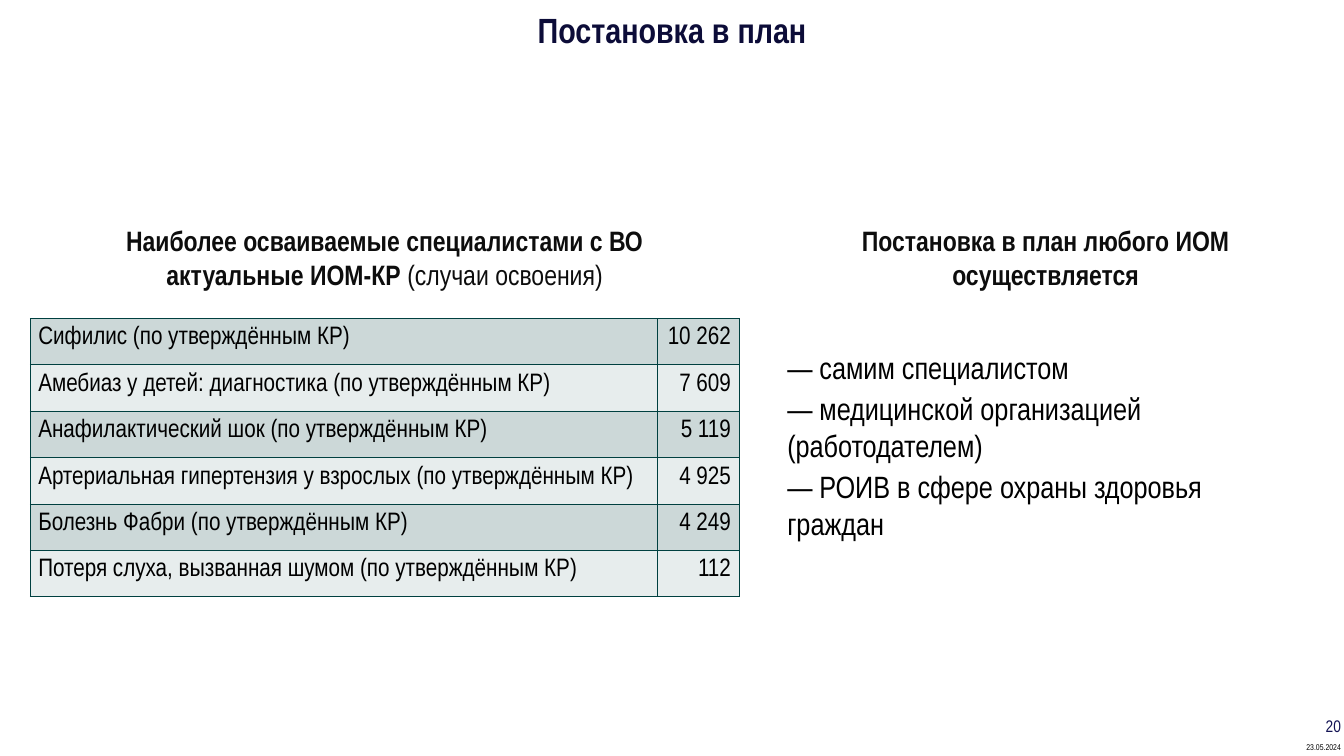
from pptx import Presentation
from pptx import util as u
from pptx.dml import color
from pptx.enum import text
from pptx.oxml import parse_xml
from pptx.oxml import ns

LEFT, CENTER, RIGHT = text.PP_ALIGN.LEFT, text.PP_ALIGN.CENTER, text.PP_ALIGN.RIGHT
TOP, MIDDLE = text.MSO_ANCHOR.TOP, text.MSO_ANCHOR.MIDDLE
EVEN = (0.08, 0.08, 0.08, 0.08)
NARROW = (0.04, 0.04, 0.04, 0.04)
LINE_BREAK = "\n"


def rgb(value):
    return color.RGBColor.from_string(value)


def apply(target, values):
    for name, value in values.items():
        setattr(target, name, value)


class SlideBuilder:
    """Holds the style and the current slide and adds elements to it."""

    font = "Arial Narrow"
    border = "004040"
    bands = ("CCD8D8", "E7EDED")

    def __init__(self, slide):
        self.slide = slide

    def fill_paragraph(self, paragraph, runs, size, ink, align=LEFT, after=0):
        apply(paragraph, {"alignment": align, "space_after": u.Pt(after)})
        for words, bold in runs:
            if words == LINE_BREAK:
                paragraph.add_line_break()
                continue
            run = paragraph.add_run()
            run.text = words
            apply(run.font, {"name": self.font, "size": u.Pt(size), "bold": bold})
            run.font.color.rgb = rgb(ink)

    def margins(self, target, insets):
        sides = ("margin_left", "margin_top", "margin_right", "margin_bottom")
        apply(target, {side: u.Inches(inset) for side, inset in zip(sides, insets)})

    def text_box(self, place, paragraphs, size, ink, align=LEFT, anchor=MIDDLE,
                 insets=EVEN, wrap=True, after=0):
        shape = self.slide.shapes.add_textbox(*map(u.Inches, place))
        frame = shape.text_frame
        apply(frame, {"word_wrap": wrap, "vertical_anchor": anchor,
                      "auto_size": text.MSO_AUTO_SIZE.SHAPE_TO_FIT_TEXT})
        self.margins(frame, insets)
        for index, runs in enumerate(paragraphs):
            paragraph = frame.add_paragraph() if index else frame.paragraphs[0]
            self.fill_paragraph(paragraph, runs, size, ink, align, after)

    def outline(self, cell):
        properties = cell._tc.get_or_add_tcPr()
        for side in ("lnL", "lnR", "lnT", "lnB"):
            properties.append(parse_xml(
                f'<a:{side} {ns.nsdecls("a")} w="{u.Pt(0.75)}"><a:solidFill>'
                f'<a:srgbClr val="{self.border}"/></a:solidFill></a:{side}>'))

    def table(self, left, top, widths, row_height, rows, size, ink):
        place = (left, top, sum(widths), row_height * len(rows))
        table = self.slide.shapes.add_table(
            len(rows), len(widths), *map(u.Inches, place)).table
        apply(table, {"first_row": False, "horz_banding": False})
        for column, width in zip(table.columns, widths):
            column.width = u.Inches(width)
        for row_index, row in enumerate(rows):
            table.rows[row_index].height = u.Inches(row_height)
            for column_index, words in enumerate(row):
                cell = table.cell(row_index, column_index)
                self.margins(cell, EVEN)
                self.outline(cell)
                cell.fill.solid()
                cell.fill.fore_color.rgb = rgb(self.bands[row_index % 2])
                align = RIGHT if column_index else LEFT
                self.fill_paragraph(cell.text_frame.paragraphs[0], [(words, False)],
                                    size, ink, align)


def main():
    presentation = Presentation()
    apply(presentation, {"slide_width": u.Inches(13.33), "slide_height": u.Inches(7.5)})
    builder = SlideBuilder(presentation.slides.add_slide(presentation.slide_layouts[6]))

    builder.text_box((12.91, 7.32, 0.43, 0.18), [[("23.05.2024", False)]], 6, "000000",
                     RIGHT, TOP, NARROW, wrap=False)
    builder.text_box((0.17, 0, 12.99, 0.58), [[("Постановка в план", True)]], 25, "0C0C38",
                     CENTER)
    builder.text_box((12.91, 7.06, 0.43, 0.24), [[("20", False)]], 12, "131354",
                     RIGHT, insets=(0.04, 0.04, 0.04, 0))

    table_heading = [("Наиболее осваиваемые специалистами с ВО", True), (LINE_BREAK, True),
                     ("актуальные ИОМ-КР ", True), ("(случаи освоения)", False)]
    list_heading = [("Постановка в план любого ИОМ осуществляется", True)]
    for left, width, heading in ((0.3, 7.03, table_heading), (7.71, 5.32, list_heading)):
        builder.text_box((left, 2.14, width, 0.83), [heading], 20, "0D0D0D", CENTER)

    modules = [
        ("Сифилис (по утверждённым КР)", "10 262"),
        ("Амебиаз у детей: диагностика (по утверждённым КР)", "7 609"),
        ("Анафилактический шок (по утверждённым КР)", "5 119"),
        ("Артериальная гипертензия у взрослых (по утверждённым КР)", "4 925"),
        ("Болезнь Фабри (по утверждённым КР)", "4 249"),
        ("Потеря слуха, вызванная шумом (по утверждённым КР)", "112"),
    ]
    builder.table(0.3, 3.16, (6.22, 0.81), 0.41, modules, 18, "000000")

    planners = ("— самим специалистом", "— медицинской организацией (работодателем)",
                "— РОИВ в сфере охраны здоровья граждан")
    builder.text_box((7.71, 3.41, 5.32, 2.04), [[(planner, False)] for planner in planners],
                     22, "000000", anchor=TOP, insets=(0.1, 0.05, 0.1, 0.05), after=3)

    presentation.save("out.pptx")


if __name__ == "__main__":
    main()
